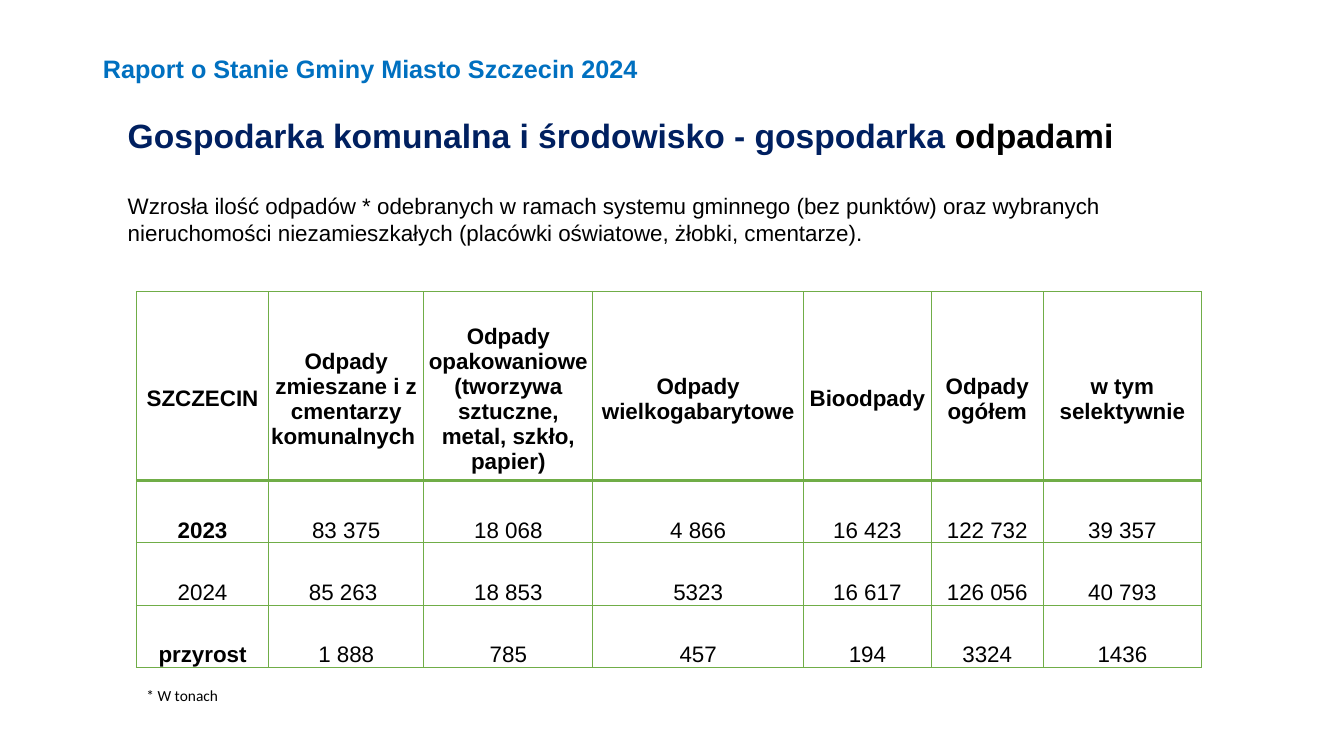
from lxml.etree import SubElement
from pptx import Presentation
from pptx.dml.color import RGBColor
from pptx.enum.text import MSO_ANCHOR, MSO_AUTO_SIZE, PP_ALIGN
from pptx.oxml.ns import qn
from pptx.util import Cm, Pt

BLUE = RGBColor(0x00, 0x70, 0xC0)
NAVY = RGBColor(0x00, 0x20, 0x60)
BLACK = RGBColor(0x00, 0x00, 0x00)
GREEN = RGBColor(0x70, 0xAD, 0x47)

COLUMN_WIDTHS = [3.33, 3.91, 4.26, 5.31, 3.22, 2.82, 3.99]
HEADER_HEIGHT = 4.76
ROW_HEIGHT = 1.57
WASTE = [
    ["SZCZECIN", "Odpady zmieszane i z cmentarzy komunalnych ",
     "Odpady opakowaniowe (tworzywa sztuczne, metal, szkło, papier)",
     "Odpady wielkogabarytowe", "Bioodpady", "Odpady ogółem", "w tym selektywnie"],
    ["2023", "83 375", "18 068", "4 866", "16 423", "122 732", "39 357"],
    ["2024", "85 263 ", "18 853", "5323", "16 617", "126 056", "40 793"],
    ["przyrost", "1 888", "785", "457", "194", "3324", "1436"],
]
BOLD_LABELS = ("2023", "przyrost")


class ReportSlide:
    def __init__(self, presentation, font="Arial"):
        self.font = font
        self.slide = presentation.slides.add_slide(presentation.slide_layouts[5])

    def style(self, run, size, color=BLACK, bold=False, font=None):
        run.font.name = font or self.font
        run.font.size = Pt(size)
        run.font.bold = bold
        run.font.color.rgb = color

    def title(self, wording, left, top, width, height):
        heading = self.slide.shapes.title
        heading.left, heading.top = Cm(left), Cm(top)
        heading.width, heading.height = Cm(width), Cm(height)
        frame = heading.text_frame
        frame.text = wording
        frame.auto_size = MSO_AUTO_SIZE.NONE
        frame.vertical_anchor = MSO_ANCHOR.MIDDLE
        paragraph = frame.paragraphs[0]
        paragraph.alignment = PP_ALIGN.LEFT
        paragraph.line_spacing = 0.9
        self.style(paragraph.runs[0], 18, BLUE, True)

    def text(self, parts, left, top, width, height, size, bold=False, font=None):
        box = self.slide.shapes.add_textbox(Cm(left), Cm(top), Cm(width), Cm(height))
        frame = box.text_frame
        frame.word_wrap = True
        frame.auto_size = MSO_AUTO_SIZE.SHAPE_TO_FIT_TEXT
        paragraph = frame.paragraphs[0]
        for wording, color in parts:
            run = paragraph.add_run()
            run.text = wording
            self.style(run, size, color, bold, font)
        return paragraph

    def border(self, cell, side, points):
        line = SubElement(cell._tc.get_or_add_tcPr(), qn(f"a:ln{side}"), w=str(Pt(points)))
        fill = SubElement(line, qn("a:solidFill"))
        SubElement(fill, qn("a:srgbClr"), val=str(GREEN))

    def cell(self, cell, wording, is_header, below_header):
        for side in "LRTB":
            thick = (is_header and side == "B") or (below_header and side == "T")
            self.border(cell, side, 2 if thick else 1)
        cell.fill.background()
        cell.margin_left = cell.margin_right = Cm(0.03)
        cell.margin_top = Cm(0.66 if is_header else 0.03)
        cell.margin_bottom = 0
        cell.vertical_anchor = MSO_ANCHOR.MIDDLE if is_header else MSO_ANCHOR.BOTTOM
        cell.text_frame.text = wording
        paragraph = cell.text_frame.paragraphs[0]
        paragraph.alignment = PP_ALIGN.CENTER
        self.style(paragraph.runs[0], 16, bold=is_header or wording in BOLD_LABELS)

    def table(self, rows, left, top):
        heights = [HEADER_HEIGHT] + [ROW_HEIGHT] * (len(rows) - 1)
        grid = self.slide.shapes.add_table(
            len(rows), len(COLUMN_WIDTHS), Cm(left), Cm(top),
            Cm(sum(COLUMN_WIDTHS)), Cm(sum(heights))).table
        grid.first_row = grid.horz_banding = False
        for column, width in zip(grid.columns, COLUMN_WIDTHS):
            column.width = Cm(width)
        for r, (values, height) in enumerate(zip(rows, heights)):
            grid.rows[r].height = Cm(height)
            for c, wording in enumerate(values):
                self.cell(grid.cell(r, c), wording, r == 0, r == 1)


def main():
    presentation = Presentation()
    presentation.slide_width = Cm(33.87)
    presentation.slide_height = Cm(19.05)
    report = ReportSlide(presentation)
    report.title("Raport o Stanie Gminy Miasto Szczecin 2024", 2.34, 0.79, 14.83, 1.98)
    topic = report.text(
        [("Gospodarka komunalna i środowisko - gospodarka ", NAVY), ("odpadami", BLACK)],
        2.97, 2.77, 27.33, 1.27, 24, bold=True)
    topic.alignment = PP_ALIGN.JUSTIFY
    topic.space_after = Pt(6)
    report.table(WASTE, 3.44, 7.35)
    report.text(
        [("Wzrosła ilość odpadów * odebranych w ramach systemu gminnego (bez punktów) "
          "oraz wybranych nieruchomości niezamieszkałych (placówki oświatowe, żłobki, "
          "cmentarze).", BLACK)],
        2.97, 4.72, 27.64, 2.31, 16)
    report.text([("* W tonach", BLACK)], 3.44, 17.17, 4.6, 0.74, 11, font="Calibri")
    presentation.save("out.pptx")


if __name__ == "__main__":
    main()
